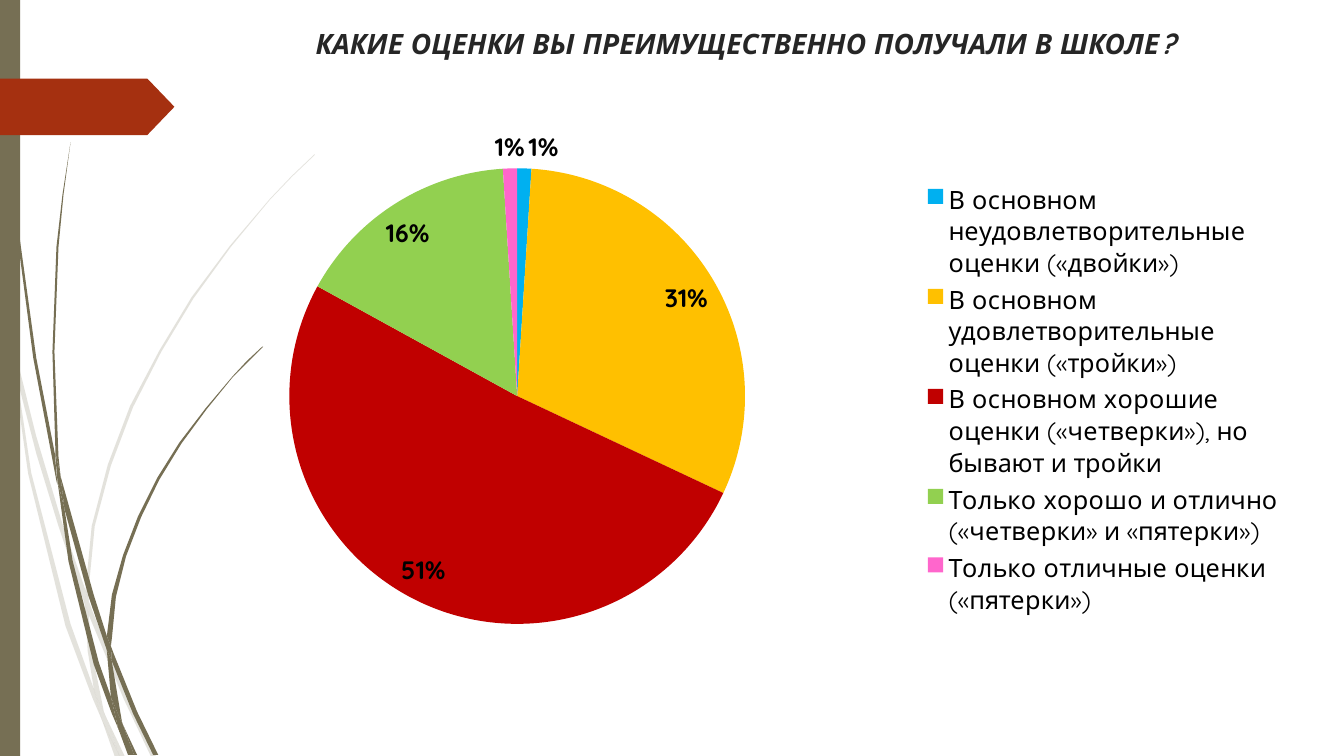
from dataclasses import dataclass

from lxml import etree
from pptx import Presentation
from pptx.chart.data import CategoryChartData
from pptx.dml.color import RGBColor
from pptx.enum.chart import XL_CHART_TYPE, XL_LABEL_POSITION, XL_LEGEND_POSITION
from pptx.enum.shapes import MSO_SHAPE
from pptx.enum.text import MSO_ANCHOR, PP_ALIGN
from pptx.oxml.ns import qn
from pptx.util import Inches, Pt

PIE = XL_CHART_TYPE.PIE
BEST_FIT = XL_LABEL_POSITION.BEST_FIT
LEGEND_RIGHT = XL_LEGEND_POSITION.RIGHT
RECT = MSO_SHAPE.RECTANGLE
PENTAGON = MSO_SHAPE.PENTAGON
TOP = MSO_ANCHOR.TOP
CENTER = PP_ALIGN.CENTER

COLS, ROWS = 1333, 750
CELL = Inches(0.01)


@dataclass(frozen=True)
class Theme:
    font: str = "Quicksand"
    title_size: int = 20
    chart_size: int = 18
    title: str = "262626"
    text: str = "000000"
    olive: str = "766F54"
    accent: str = "A53010"
    pale_opacity: int = 20


THEME = Theme()

TITLE = "КАКИЕ ОЦЕНКИ ВЫ ПРЕИМУЩЕСТВЕННО ПОЛУЧАЛИ В ШКОЛЕ?"

GRADES = [
    ("В основном неудовлетворительные оценки («двойки»)", 1, "00B0F0"),
    ("В основном удовлетворительные оценки («тройки»)", 31, "FFC000"),
    ("В основном хорошие оценки («четверки»), но бывают и тройки", 51, "C00000"),
    ("Только хорошо и отлично («четверки» и «пятерки»)", 16, "92D050"),
    ("Только отличные оценки («пятерки»)", 1, "FF66CC"),
]

PALE_BLADES = [
    [(11, 350), (9, 322), (0, 282), (0, 299), (10, 344)],
    [(58, 522), (84, 599), (85, 586), (62, 520), (36, 433), (14, 345), (17, 376), (36, 450)],
    [(92, 607), (88, 596), (88, 610), (123, 694), (150, 751), (155, 751), (127, 692)],
    [(119, 751), (124, 751), (105, 711)],
    [(93, 683), (70, 619), (31, 469), (17, 376), (11, 350), (28, 470), (65, 621),
     (92, 693), (101, 714), (99, 707)],
    [(84, 599), (87, 646), (93, 683), (96, 692), (105, 711), (103, 706), (91, 646),
     (88, 610), (88, 608)],
    [(88, 584), (94, 522), (110, 462), (132, 404), (160, 349), (192, 296), (229, 245),
     (268, 198), (290, 175), (312, 154), (312, 153), (289, 175), (268, 197), (228, 244),
     (190, 295), (158, 348), (129, 403), (107, 461), (91, 522), (85, 584), (85, 586),
     (88, 596)],
    [(101, 714), (114, 751), (119, 751)],
    [(88, 608), (88, 610), (88, 596), (85, 586), (84, 599)],
    [(96, 692), (93, 683), (99, 707), (101, 714), (119, 751), (105, 711)],
]

OLIVE_BLADES = [
    [(7, 110), (17, 233), (33, 355), (56, 477), (57, 481), (55, 457), (55, 453),
     (36, 355), (19, 232), (8, 109), (5, 48), (3, 0), (3, 48)],
    [(88, 592), (106, 645), (106, 633), (106, 631), (93, 590), (60, 472), (64, 505)],
    [(113, 649), (110, 641), (111, 656), (132, 708), (152, 749), (157, 749), (136, 706)],
    [(110, 691), (98, 657), (72, 556), (64, 505), (57, 477), (68, 557), (93, 659),
     (111, 708), (117, 722), (116, 717)],
    [(60, 472), (58, 453), (54, 349), (58, 245), (63, 193), (70, 141), (62, 193),
     (56, 245), (52, 349), (55, 449), (60, 472)],
    [(133, 749), (136, 749), (122, 719)],
    [(57, 477), (64, 505), (60, 472), (55, 449), (55, 453)],
    [(111, 633), (115, 592), (125, 552), (140, 513), (158, 476), (180, 440), (205, 406),
     (231, 374), (246, 359), (261, 344), (260, 344), (245, 358), (231, 373), (204, 405),
     (178, 439), (156, 474), (137, 512), (122, 551), (111, 590), (106, 631), (110, 641)],
    [(117, 722), (127, 749), (131, 749)],
    [(106, 645), (110, 691), (116, 706), (122, 719), (121, 716), (111, 656), (109, 651)],
    [(106, 645), (109, 651), (111, 656), (110, 641), (106, 631), (106, 633)],
    [(116, 706), (110, 691), (116, 717), (117, 722), (130, 749), (133, 749), (122, 719)],
]


def grid(*cells):
    return [round(c * CELL) for c in cells]


def paint(sp, color, opacity=100):
    sp.shadow.inherit = False
    sp.fill.solid()
    sp.fill.fore_color.rgb = RGBColor.from_string(color)
    sp.line.fill.background()
    if opacity < 100:
        rgb = sp.fill._xPr.find(f"{qn('a:solidFill')}/{qn('a:srgbClr')}")
        etree.SubElement(rgb, qn("a:alpha")).set("val", str(opacity * 1000))


def style_font(font, size, color, bold=False, italic=False):
    font.name = THEME.font
    font.size = Pt(size)
    font.bold = bold
    font.italic = italic
    font.color.rgb = RGBColor.from_string(color)


def add_blade(slide, outline, color, opacity):
    points = [grid(*point) for point in outline]
    builder = slide.shapes.build_freeform(*points[0])
    builder.add_line_segments(points[1:], close=True)
    paint(builder.convert_to_shape(), color, opacity)


def add_block(slide, kind, box, color):
    sp = slide.shapes.add_shape(kind, *grid(*box))
    paint(sp, color)
    return sp


def add_title(slide, text, box):
    tf = slide.shapes.add_textbox(*grid(*box)).text_frame
    tf.word_wrap = True
    tf.vertical_anchor = TOP
    p = tf.paragraphs[0]
    p.text = text
    p.alignment = CENTER
    style_font(p.font, THEME.title_size, THEME.title, bold=True, italic=True)


def place(parent, index, box, size, inner=False):
    for old in parent.findall(qn("c:layout")):
        parent.remove(old)
    layout = etree.Element(qn("c:layout"))
    manual = etree.SubElement(layout, qn("c:manualLayout"))
    settings = [("layoutTarget", "inner")] if inner else []
    settings += [("xMode", "edge"), ("yMode", "edge")]
    settings += [(name, cells / total) for name, cells, total in zip("xywh", box, size * 2)]
    for name, value in settings:
        etree.SubElement(manual, qn(f"c:{name}")).set("val", str(value))
    parent.insert(index, layout)


def add_pie(slide, grades, box, pie_box, legend_box):
    names, values, colors = zip(*grades)
    data = CategoryChartData()
    data.categories = names
    data.add_series("Series 1", values)
    chart = slide.shapes.add_chart(PIE, *grid(*box), data).chart
    chart.has_title = False
    style_font(chart.font, THEME.chart_size, THEME.text)

    plot = chart.plots[0]
    plot.vary_by_categories = True
    for i, color in enumerate(colors):
        fill = plot.series[0].points[i].format.fill
        fill.solid()
        fill.fore_color.rgb = RGBColor.from_string(color)

    labels = plot.series[0].data_labels
    labels.show_value = False
    labels.show_percentage = True
    labels.number_format = "0%"
    labels.number_format_is_linked = False
    labels.position = BEST_FIT
    style_font(labels.font, THEME.chart_size, THEME.text, bold=True)

    chart.has_legend = True
    legend = chart.legend
    legend.position = LEGEND_RIGHT
    legend.include_in_layout = False
    style_font(legend.font, THEME.chart_size, THEME.text)
    size = box[2:]
    place(legend._element, 1, legend_box, size)
    place(plot._element.getparent(), 0, pie_box, size, inner=True)


def main():
    prs = Presentation()
    prs.slide_width, prs.slide_height = grid(COLS, ROWS)
    slide = prs.slides.add_slide(prs.slide_layouts[6])
    for blades, opacity in ((PALE_BLADES, THEME.pale_opacity), (OLIVE_BLADES, 100)):
        for outline in blades:
            add_blade(slide, outline, THEME.olive, opacity)
    add_block(slide, RECT, (0, 0, 20, ROWS), THEME.olive)
    pointer = add_block(slide, PENTAGON, (-1, 78, 174, 56), THEME.accent)
    pointer.adjustments[0] = 0.48
    add_title(slide, TITLE, (222, 21, 1034, 63))
    add_pie(slide, GRADES, (135, 111, 1149, 570), (152, 49, 452, 466), (775, 66, 368, 439))
    prs.save("out.pptx")


if __name__ == "__main__":
    main()
